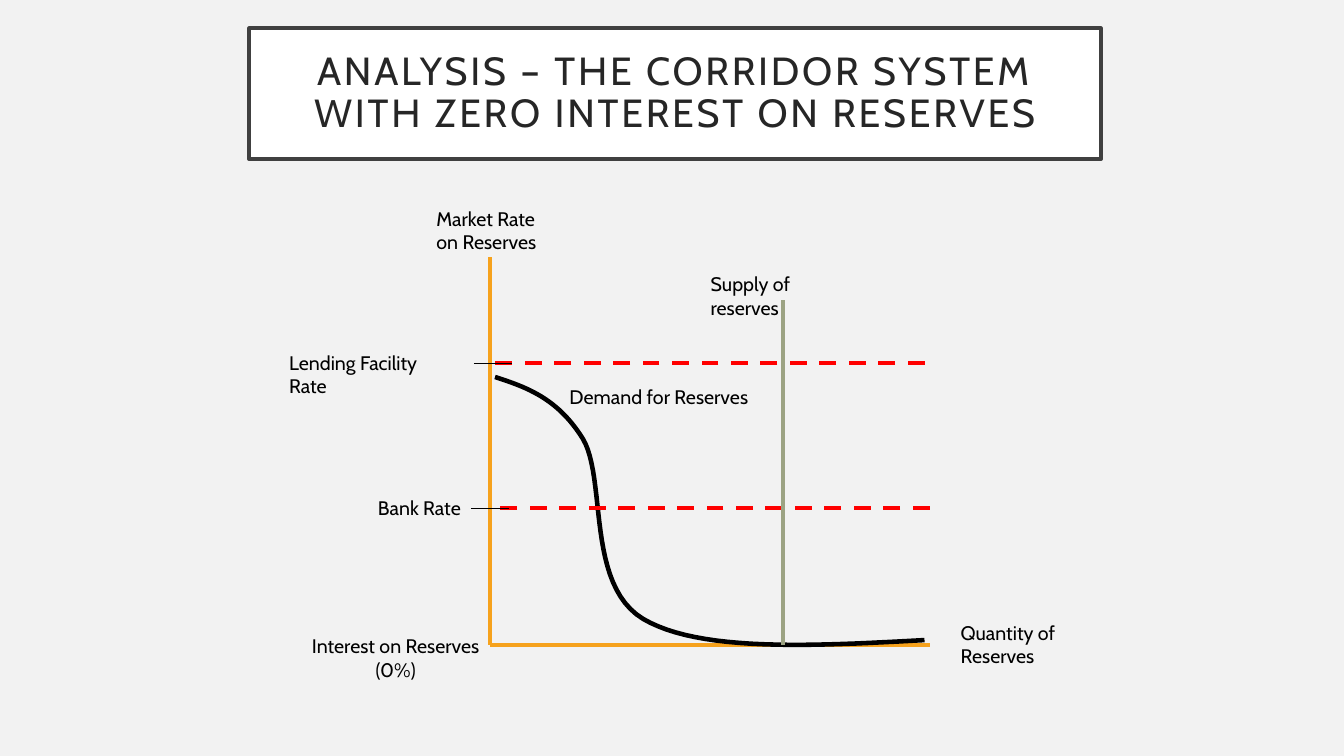
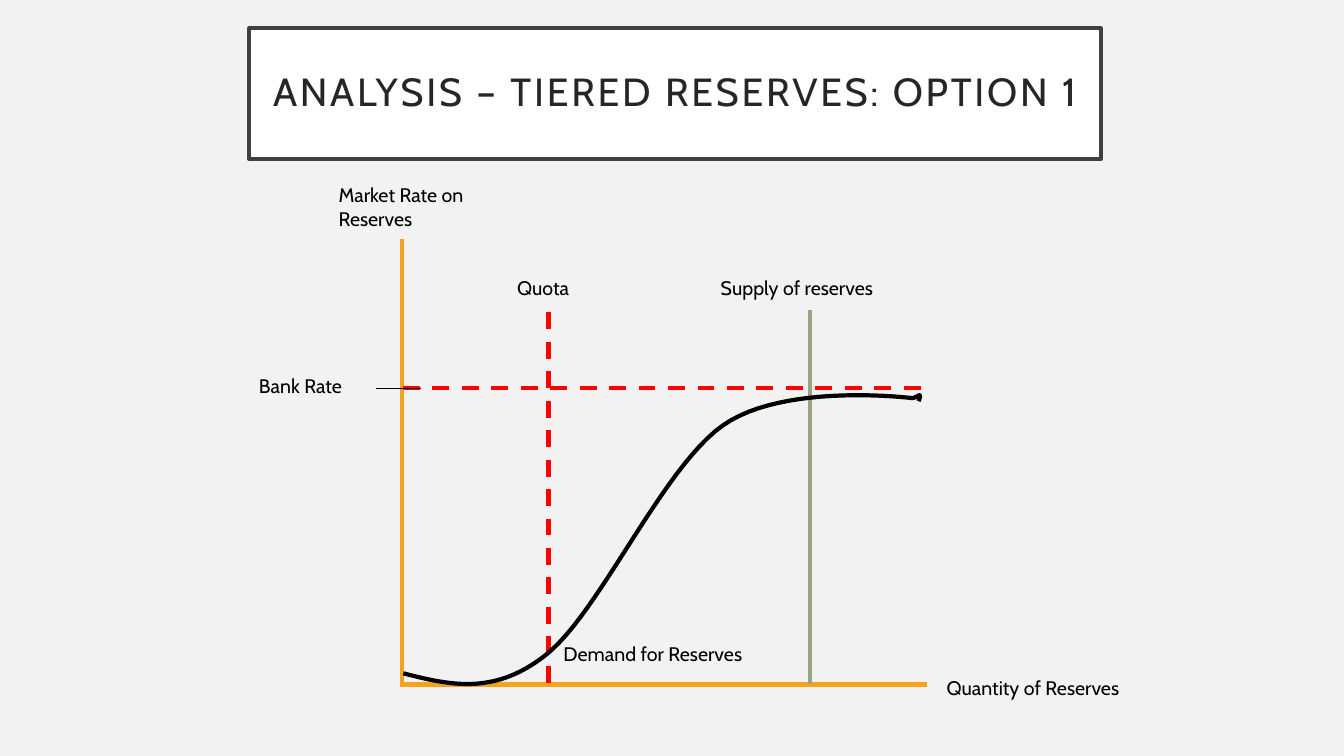
from dataclasses import dataclass

from pptx import Presentation
from pptx.dml.color import RGBColor
from pptx.enum.dml import MSO_LINE
from pptx.enum.text import MSO_ANCHOR, MSO_AUTO_SIZE, PP_ALIGN
from pptx.oxml.xmlchemy import OxmlElement
from pptx.util import Pt

PX = 9144  # 100 px to the inch
SLIDE_SIZE = (1333, 750)
TITLE_BOX = (247, 28, 845, 130)
TITLE_INSET = 20
TITLE_ONLY = 5
CURVE_STEPS = 24

PAPER = RGBColor(0xF2, 0xF2, 0xF2)
WHITE = RGBColor(0xFF, 0xFF, 0xFF)
FRAME = RGBColor(0x40, 0x40, 0x40)
TITLE_INK = RGBColor(0x26, 0x26, 0x26)
INK = RGBColor(0x00, 0x00, 0x00)
AXIS = RGBColor(0xF6, 0xA2, 0x1D)
LIMIT = RGBColor(0xFF, 0x00, 0x00)
SUPPLY = RGBColor(0x9C, 0xA3, 0x83)
FONT = "Cabin"


def px(*lengths):
    return [round(length * PX) for length in lengths]


def write(frame, text, size=14, color=INK, align=PP_ALIGN.LEFT,
          line_spacing=None, tracking=None):
    """Fill a text frame, one paragraph for each line of text."""
    frame.word_wrap = True
    for index, line in enumerate(text.split("\n")):
        paragraph = frame.add_paragraph() if index else frame.paragraphs[0]
        paragraph.alignment = align
        if line_spacing:
            paragraph.line_spacing = line_spacing
        run = paragraph.add_run()
        run.text = line
        run.font.name = FONT
        run.font.size = Pt(size)
        run.font.color.rgb = color
        if tracking:
            run.font._element.set("spc", str(tracking * 100))


def bezier(start, first, second, end):
    """Points along one cubic segment, without its start."""
    for step in range(1, CURVE_STEPS + 1):
        t = step / CURVE_STEPS
        weights = ((1 - t) ** 3, 3 * t * (1 - t) ** 2, 3 * t * t * (1 - t), t ** 3)
        yield tuple(
            sum(weight * value for weight, value in zip(weights, values))
            for values in zip(start, first, second, end)
        )


@dataclass
class Graph:
    """Drawing area whose lengths count from its top left corner."""
    shapes: object
    left: int
    top: int

    def at(self, x, y):
        return px(self.left + x, self.top + y)

    def line(self, start, end, color, width=3, dashed=False):
        connector = self.shapes.add_connector(1, *self.at(*start), *self.at(*end))
        connector.line.color.rgb = color
        connector.line.width = Pt(width)
        if dashed:
            connector.line.dash_style = MSO_LINE.DASH
        connector._element.spPr.append(OxmlElement("a:effectLst"))

    def limit(self, start, end):
        self.line(start, end, LIMIT, dashed=True)

    def tick(self, left, right, y):
        self.line((left, y), (right, y), INK, width=0.5)

    def label(self, text, x, y, width, height, **style):
        box = self.shapes.add_textbox(*self.at(x, y), *px(width, height))
        write(box.text_frame, text, **style)
        box.text_frame.auto_size = MSO_AUTO_SIZE.SHAPE_TO_FIT_TEXT

    def curve(self, start, segments, width):
        points, current = [], start
        for segment in segments:
            points += [self.at(*point) for point in bezier(current, *segment)]
            current = segment[-1]
        builder = self.shapes.build_freeform(*self.at(*start))
        builder.add_line_segments(points, close=False)
        outline = builder.convert_to_shape()
        outline.shadow.inherit = False
        outline.fill.background()
        outline.line.color.rgb = INK
        outline.line.width = Pt(width)


def titled_slide(prs, text):
    slide = prs.slides.add_slide(prs.slide_layouts[TITLE_ONLY])
    title = slide.shapes.title
    title.left, title.top, title.width, title.height = px(*TITLE_BOX)
    title.fill.solid()
    title.fill.fore_color.rgb = WHITE
    title.line.color.rgb = FRAME
    title.line.width = Pt(2.5)
    frame = title.text_frame
    frame.auto_size = MSO_AUTO_SIZE.NONE
    frame.vertical_anchor = MSO_ANCHOR.MIDDLE
    inset, = px(TITLE_INSET)
    frame.margin_left = frame.margin_right = inset
    frame.margin_top = frame.margin_bottom = inset
    write(frame, text, size=28, color=TITLE_INK, align=PP_ALIGN.CENTER,
          line_spacing=0.9, tracking=2)
    return slide


def corridor_graph(slide, left, top):
    graph = Graph(slide.shapes, left, top)
    width, base, supply_x = 436, 385, 291
    lending_y, bank_y = 105, 249

    # Axes and demand
    graph.line((0, 0), (0, base), AXIS)
    graph.line((width, base), (0, base), AXIS)
    graph.curve((5, 119), [
        ((36, 129), (67, 140), (92, 180)),
        ((116, 220), (95, 325), (152, 359)),
        ((208, 392), (320, 386), (431, 380)),
    ], width=3.25)

    # Rates and supply
    graph.limit((width, bank_y), (0, bank_y))
    graph.line((supply_x, base), (supply_x, 43), SUPPLY)
    graph.tick(-19, 19, bank_y)
    graph.limit((431, lending_y), (-6, lending_y))
    graph.tick(-16, 22, lending_y)

    # Labels
    graph.label("Supply of reserves", 209, 10, 166, 34)
    graph.label("Lending Facility Rate", -209, 88, 187, 34)
    graph.label("Bank Rate", -121, 232, 106, 57)
    graph.label("Market Rate on Reserves", -63, -55, 126, 57)
    graph.label("Quantity of Reserves", 457, 356, 121, 58)
    graph.label("Interest on Reserves\n(0%)", -189, 369, 191, 57,
                align=PP_ALIGN.CENTER)
    graph.label("Demand for Reserves", 69, 122, 236, 34)


def tiered_graph(slide, left, top):
    graph = Graph(slide.shapes, left, top)
    base, foot = 442, 445
    supply_x, quota_x, bank_y = 404, 145, 148

    # Axes and supply
    graph.line((0, 0), (0, foot), AXIS)
    graph.line((520, base), (1, base), AXIS)
    graph.line((supply_x, base), (supply_x, 71), SUPPLY)

    # Rate and quota
    graph.limit((514, bank_y), (-5, bank_y))
    graph.tick(-26, 19, bank_y)
    graph.limit((quota_x, 73), (quota_x, foot))

    # Demand, with its small hook at the right end
    graph.curve((1, 431), [
        ((45, 442), (90, 454), (142, 413)),
        ((195, 372), (258, 227), (318, 185)),
        ((379, 142), (506, 158), (506, 158)),
        ((508, 158), (512, 155), (513, 155)),
        ((514, 156), (513, 159), (512, 161)),
    ], width=3)

    # Labels
    graph.label("Supply of reserves", 306, 32, 197, 39)
    graph.label("Quota", 104, 32, 98, 39)
    graph.label("Bank Rate", -152, 129, 125, 39)
    graph.label("Market Rate on Reserves", -73, -60, 150, 66)
    graph.label("Quantity of Reserves", 530, 429, 222, 39)
    graph.label("Demand for Reserves", 150, 395, 236, 34)


def main():
    prs = Presentation()
    prs.slide_width, prs.slide_height = px(*SLIDE_SIZE)
    backdrop = prs.slide_master.background.fill
    backdrop.solid()
    backdrop.fore_color.rgb = PAPER

    corridor = titled_slide(
        prs, "ANALYSIS – THE CORRIDOR SYSTEM WITH ZERO INTEREST ON RESERVES")
    corridor_graph(corridor, 486, 255)

    tiered = titled_slide(prs, "ANALYSIS – TIERED RESERVES: OPTION 1")
    tiered_graph(tiered, 399, 237)

    prs.save("out.pptx")


if __name__ == "__main__":
    main()
